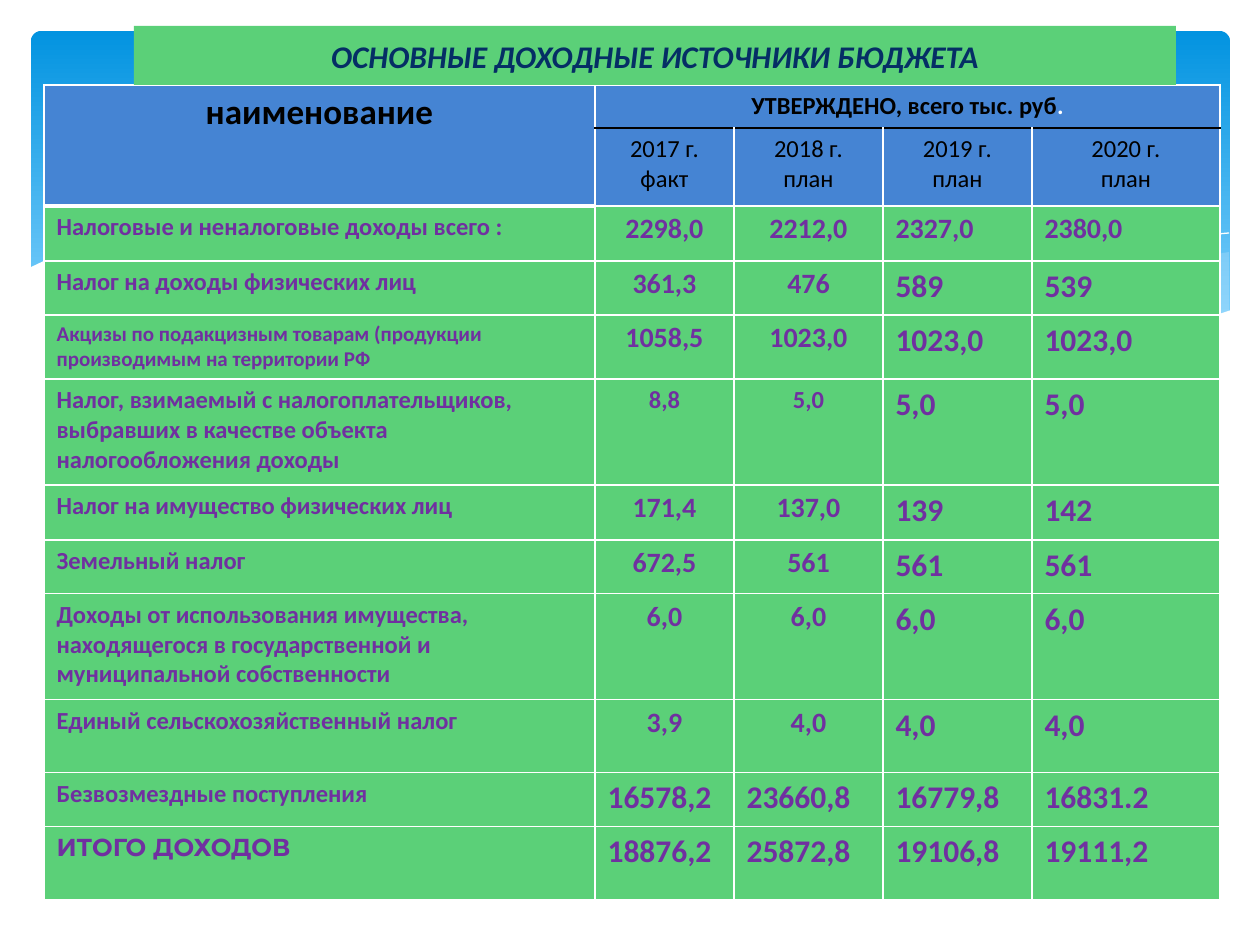
"""Builds a budget slide with a table of the main revenue sources."""
from lxml.etree import SubElement
from pptx import Presentation
from pptx.dml.color import RGBColor
from pptx.enum.shapes import MSO_SHAPE
from pptx.enum.text import MSO_ANCHOR, PP_ALIGN
from pptx.oxml.ns import qn
from pptx.util import Emu, Pt

SCALE = 914400 / 126
COLORS = {
    "sky": "0293E0", "pale_sky": "83D3FE", "mist": "C6E7FC", "white": "FFFFFF",
    "black": "000000", "blue": "4584D3", "green": "5BD078", "purple": "7030A0",
    "navy": "052E65",
}
TITLE = "ОСНОВНЫЕ ДОХОДНЫЕ ИСТОЧНИКИ БЮДЖЕТА"
YEARS = [["2017 г. факт"], ["2018 г. план"], ["2019 г. план"], ["2020 г.", "план"]]
REVENUES = [
    ("Налоговые и неналоговые доходы всего :", 14, ["2298,0", "2212,0", "2327,0", "2380,0"], 16, 16),
    ("Налог на доходы физических лиц", 14, ["361,3", "476", "589", "539"], 16, 18),
    ("Акцизы по подакцизным товарам (продукции производимым на территории РФ", 12,
     ["1058,5", "1023,0", "1023,0", "1023,0"], 16, 18),
    ("Налог, взимаемый с налогоплательщиков, выбравших в качестве объекта налогообложения доходы", 14,
     ["8,8", "5,0", "5,0", "5,0"], 14, 18),
    ("Налог на имущество физических лиц", 14, ["171,4", "137,0", "139", "142"], 16, 18),
    ("Земельный налог", 14, ["672,5", "561", "561", "561"], 16, 18),
    ("Доходы от использования имущества, находящегося в государственной и муниципальной собственности", 14,
     ["6,0", "6,0", "6,0", "6,0"], 16, 18),
    ("Единый сельскохозяйственный налог", 14, ["3,9", "4,0", "4,0", "4,0"], 16, 18),
    ("Безвозмездные поступления", 14, ["16578,2", "23660,8", "16779,8", "16831.2"], 18, 18),
    ("ИТОГО ДОХОДОВ", 14, ["18876,2", "25872,8", "19106,8", "19111,2"], 18, 18),
]
COLUMN_WIDTHS = [551, 139, 149, 149, 188]
ROW_HEIGHTS = [43, 78, 55, 54, 64, 106, 55, 54, 106, 73, 54, 73]
MIST_WAVES = [
    (29, [(1229, 252), (1159, 264), (1085, 281), (982, 305), (889, 324), (833, 334), (906, 343),
          (984, 349), (1052, 349), (1121, 342), (1178, 330), (1229, 311)]),
    (40, [(1125, 344), (1055, 334), (976, 320), (890, 302), (793, 280), (736, 266), (665, 252),
          (586, 241), (503, 234), (433, 234), (360, 241), (431, 251), (509, 266), (619, 292),
          (713, 312), (799, 329), (876, 340), (943, 348), (1003, 350), (1068, 349)]),
]
WAVE_LINES = [
    [(389, 246), (451, 238), (524, 236), (616, 239), (701, 248), (801, 262), (916, 285),
     (1047, 316), (1143, 343)],
    [(772, 324), (876, 296), (978, 272), (1091, 251), (1164, 239), (1229, 233)],
]
WHITE_WAVE = [
    (1231, 310), (1172, 330), (1118, 342), (1055, 348), (980, 347), (892, 340), (790, 325),
    (667, 301), (563, 277), (460, 254), (368, 240), (290, 233), (203, 232), (134, 238),
    (84, 248), (50, 258), (29, 268), (29, 415), (1231, 415),
]


def px(value):
    return Emu(round(value * SCALE))


def color(name):
    return RGBColor.from_string(COLORS[name])


def paint(fill, name):
    fill.solid()
    fill.fore_color.rgb = color(name)


def add_box(page, kind, left, top, width, height):
    box = page.shapes.add_shape(kind, px(left), px(top), px(width), px(height))
    box.shadow.inherit = False
    box.line.fill.background()
    return box


def add_curve(page, points, closed=True):
    builder = page.shapes.build_freeform(*points[0], scale=SCALE)
    builder.add_line_segments(points[1:], close=closed)
    curve = builder.convert_to_shape()
    curve.shadow.inherit = False
    return curve


def add_backdrop(page):
    sky = add_box(page, MSO_SHAPE.ROUNDED_RECTANGLE, 31, 31, 1199, 340)
    sky.adjustments[0] = 0.03
    sky.fill.gradient()
    sky.fill.gradient_angle = 270
    for stop, name, position in zip(sky.fill.gradient_stops, ("sky", "pale_sky"), (0, 0.9)):
        stop.color.rgb = color(name)
        stop.position = position
    for opacity, points in MIST_WAVES:
        wave = add_curve(page, points)
        wave.line.fill.background()
        paint(wave.fill, "mist")
        tint = wave.fill._xPr.find(qn("a:solidFill"))[0]
        SubElement(tint, qn("a:alpha")).set("val", str(opacity * 1000))
    for points in WAVE_LINES:
        wave = add_curve(page, points, closed=False)
        wave.fill.background()
        wave.line.color.rgb = color("white")
        wave.line.width = Pt(0)
    wave = add_curve(page, WHITE_WAVE)
    wave.line.fill.background()
    paint(wave.fill, "white")


def write(frame, lines, size, name, bold=True, centered=False, font="Calibri"):
    frame.text = "\n".join(lines)
    for para in frame.paragraphs:
        para.alignment = PP_ALIGN.CENTER if centered else PP_ALIGN.LEFT
        para.font.size = Pt(size)
        para.font.name = font
        para.font.bold = bold
        para.font.color.rgb = color(name)


def style_cell(cell, row, column):
    edges = {side: ("white", 1) for side in "LRTB"}
    if column == 0 and row < 2:
        edges["B"] = ("white", 3)
    elif row < 2:
        edges["BT"[row]] = ("black", 1)
    properties = cell._tc.get_or_add_tcPr()
    for side, (name, width) in edges.items():
        line = SubElement(properties, qn(f"a:ln{side}"), w=str(Pt(width)))
        fill = SubElement(line, qn("a:solidFill"))
        SubElement(fill, qn("a:srgbClr"), val=COLORS[name])
    paint(cell.fill, "blue" if row < 2 else "green")


def add_revenue_table(page):
    table = page.shapes.add_table(
        len(ROW_HEIGHTS), len(COLUMN_WIDTHS), px(44), px(85),
        px(sum(COLUMN_WIDTHS)), px(sum(ROW_HEIGHTS))).table
    table.first_row = table.horz_banding = False
    for column, width in zip(table.columns, COLUMN_WIDTHS):
        column.width = px(width)
    for row, height in enumerate(ROW_HEIGHTS):
        table.rows[row].height = px(height)
        for column in range(len(COLUMN_WIDTHS)):
            style_cell(table.cell(row, column), row, column)
    table.cell(0, 0).merge(table.cell(1, 0))
    table.cell(0, 1).merge(table.cell(0, 4))

    write(table.cell(0, 0).text_frame, ["наименование"], 20, "black", centered=True)
    heading = table.cell(0, 1).text_frame
    write(heading, ["УТВЕРЖДЕНО, всего тыс. руб"], 14, "black", centered=True)
    span = heading.paragraphs[0].add_run()
    span.text = "."
    span.font.color.rgb = color("white")
    for column, lines in enumerate(YEARS, 1):
        write(table.cell(1, column).text_frame, lines, 14, "black", bold=False, centered=True)
    for row, (label, label_size, values, early_size, late_size) in enumerate(REVENUES, 2):
        font = "Montserrat" if row == len(ROW_HEIGHTS) - 1 else "Calibri"
        write(table.cell(row, 0).text_frame, [label], label_size, "purple", font=font)
        for column, value in enumerate(values, 1):
            early = column < 3
            write(table.cell(row, column).text_frame, [value], early_size if early else late_size,
                  "purple", centered=early and early_size < 18)


def add_title(page):
    box = add_box(page, MSO_SHAPE.RECTANGLE, 134, 26, 1042, 59)
    paint(box.fill, "green")
    box.text_frame.word_wrap = True
    box.text_frame.vertical_anchor = MSO_ANCHOR.MIDDLE
    write(box.text_frame, [TITLE], 18, "navy", centered=True)
    box.text_frame.paragraphs[0].font.italic = True


def main():
    deck = Presentation()
    deck.slide_width, deck.slide_height = px(1260), px(945)
    page = deck.slides.add_slide(deck.slide_layouts[6])
    add_backdrop(page)
    add_revenue_table(page)
    add_title(page)
    deck.save("out.pptx")


if __name__ == "__main__":
    main()
